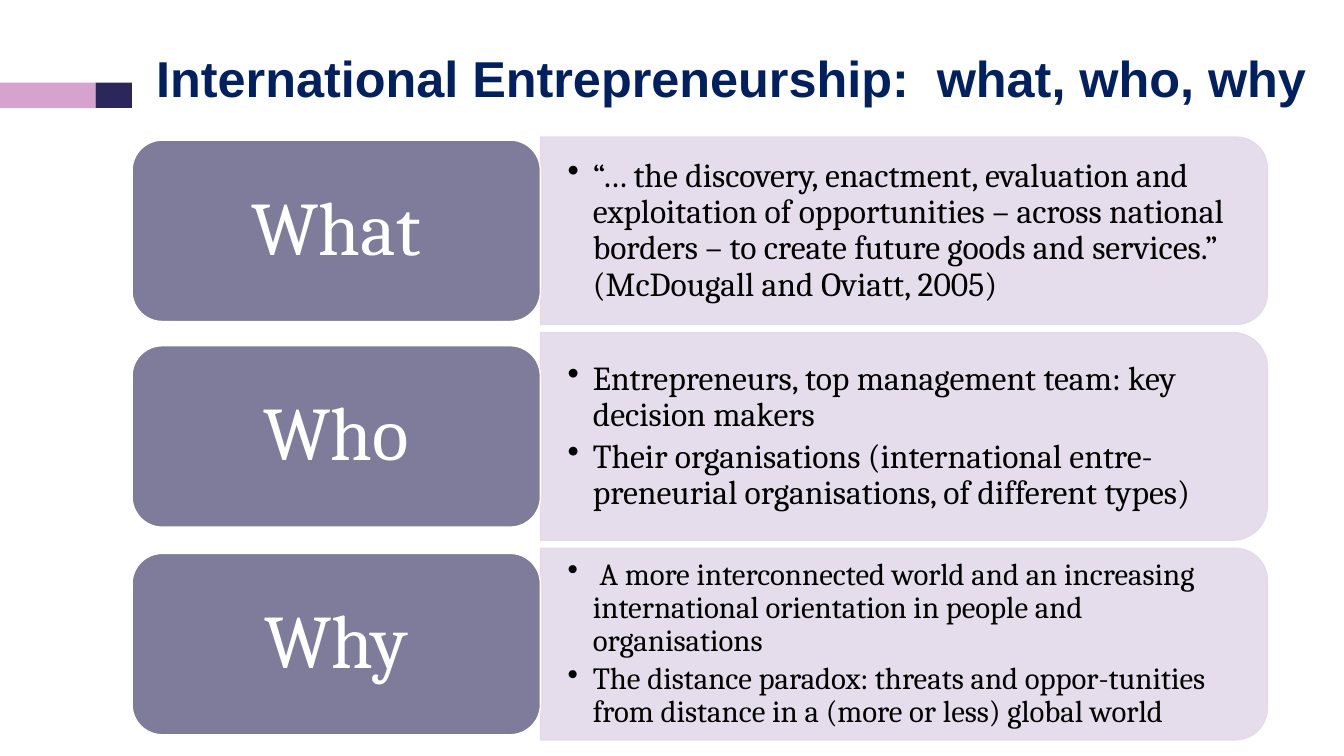
import pptx
import pptx.util
import pptx.dml.color
import pptx.enum.shapes
import pptx.enum.text
import pptx.oxml
import pptx.oxml.ns
from dataclasses import dataclass

PX = 9144
SHAPES = pptx.enum.shapes.MSO_SHAPE
ALIGN = pptx.enum.text.PP_ALIGN


@dataclass(frozen=True)
class Theme:
    pink: str = "D5A3CD"
    indigo: str = "2C275B"
    navy: str = "002060"
    lilac: str = "E3D9EA"
    slate: str = "7F7B9A"
    white: str = "FFFFFF"
    black: str = "000000"
    heading_font: str = "Arial"
    body_font: str = "Cambria"
    heading_size: int = 36
    label_size: int = 54
    body_size: int = 24
    small_size: int = 22


THEME = Theme()

ROWS = [
    ("What", 186, THEME.body_size, [
        "“… the discovery, enactment, evaluation and exploitation of opportunities – across national "
        "borders – to create future goods and services.” (McDougall and Oviatt, 2005)",
    ]),
    ("Who", 206, THEME.body_size, [
        "Entrepreneurs, top management team: key decision makers",
        "Their organisations (international entre-preneurial organisations, of different types)",
    ]),
    ("Why", 190, THEME.small_size, [
        " A more interconnected world and an increasing international orientation in people and organisations",
        "The distance paradox: threats and oppor-tunities from distance in a (more or less) global world",
    ]),
]


def rgb(colour):
    return pptx.dml.color.RGBColor.from_string(colour)


def apply(target, values):
    for name, value in values.items():
        setattr(target, name, value)


def emu(*lengths):
    return [round(length * PX) for length in lengths]


def add_block(slide, preset, box, fill, line=None, opacity=None):
    block = slide.shapes.add_shape(preset, *emu(*box))
    block.shadow.inherit = False
    block.fill.solid()
    block.fill.fore_color.rgb = rgb(fill)
    if line:
        block.line.color.rgb = rgb(line)
        block.line.width = pptx.util.Pt(1)
    else:
        block.line.fill.background()
    if opacity:
        for colour in block._element.spPr.iter(pptx.oxml.ns.qn("a:srgbClr")):
            pptx.oxml.ns.qn("a:alpha")
            alpha = colour.makeelement(pptx.oxml.ns.qn("a:alpha"), {"val": str(opacity * 1000)})
            colour.append(alpha)
    return block


def write(shape, lines, font, margins, align=ALIGN.LEFT, bullets=False):
    frame = shape.text_frame
    sides = ("margin_left", "margin_top", "margin_right", "margin_bottom")
    apply(frame, dict(zip(sides, emu(*margins))))
    apply(frame, {"word_wrap": True, "vertical_anchor": pptx.enum.text.MSO_ANCHOR.MIDDLE})
    for index, line in enumerate(lines):
        paragraph = frame.add_paragraph() if index else frame.paragraphs[0]
        paragraph.text = line
        apply(paragraph, {"alignment": align, "line_spacing": 0.9})
        if bullets:
            properties = paragraph._p.get_or_add_pPr()
            properties.set("marL", str(25 * PX))
            properties.set("indent", str(-25 * PX))
            bullet = properties.makeelement(pptx.oxml.ns.qn("a:buChar"), {"char": "•"})
            properties.append(bullet)
            if index < len(lines) - 1:
                paragraph.space_after = pptx.util.Pt(0.15 * font["size"].pt)
        colour = font["colour"]
        apply(paragraph.font, {key: value for key, value in font.items() if key != "colour"})
        paragraph.font.color.rgb = rgb(colour)


def draw_header(slide, left, top, width, height):
    bar_top, bar_height = top + 50, 25
    add_block(slide, SHAPES.RECTANGLE, (left, bar_top, 95, bar_height), THEME.pink)
    add_block(slide, SHAPES.RECTANGLE, (left + 95, bar_top, 36, bar_height), THEME.indigo)
    heading = slide.shapes.add_textbox(*emu(left + 145, top, width - 145, height))
    font = {"name": THEME.heading_font, "size": pptx.util.Pt(THEME.heading_size),
            "bold": True, "colour": THEME.navy}
    write(heading, ["International Entrepreneurship:  what, who, why"], font, (10, 5, 10, 5))


def draw_row(slide, left, top, width, height, label, size, points):
    label_width, label_height = 405, 180
    panel_left, panel_width = left + label_width, width - label_width
    centre_x, centre_y = panel_left + panel_width / 2, top + height / 2

    panel_box = (centre_x - height / 2, centre_y - panel_width / 2, height, panel_width)
    panel = add_block(slide, SHAPES.ROUND_2_SAME_RECTANGLE, panel_box, THEME.lilac, THEME.lilac, 90)
    panel.rotation = 90

    answer = slide.shapes.add_textbox(*emu(panel_left, top + 9, panel_width - 9, height - 18))
    font = {"name": THEME.body_font, "size": pptx.util.Pt(size), "colour": THEME.black}
    write(answer, points, font, (27, 14, 27, 14), bullets=True)

    label_box = (left, centre_y - label_height / 2, label_width, label_height)
    question = add_block(slide, SHAPES.ROUNDED_RECTANGLE, label_box, THEME.slate, THEME.white)
    font = {"name": THEME.body_font, "size": pptx.util.Pt(THEME.label_size), "colour": THEME.white}
    write(question, [label], font, (23, 11, 23, 11), ALIGN.CENTER)


def draw_rows(slide, left, top, width, gap):
    for label, height, size, points in ROWS:
        draw_row(slide, left, top, width, height, label, size, points)
        top += height + gap


def main():
    deck = pptx.Presentation()
    apply(deck, {"slide_width": 1333 * PX, "slide_height": 750 * PX})
    slide = deck.slides.add_slide(deck.slide_layouts[6])
    draw_header(slide, 0, 32, 1333, 98)
    draw_rows(slide, 131, 136, 1126, 8)
    deck.save("out.pptx")


if __name__ == "__main__":
    main()
